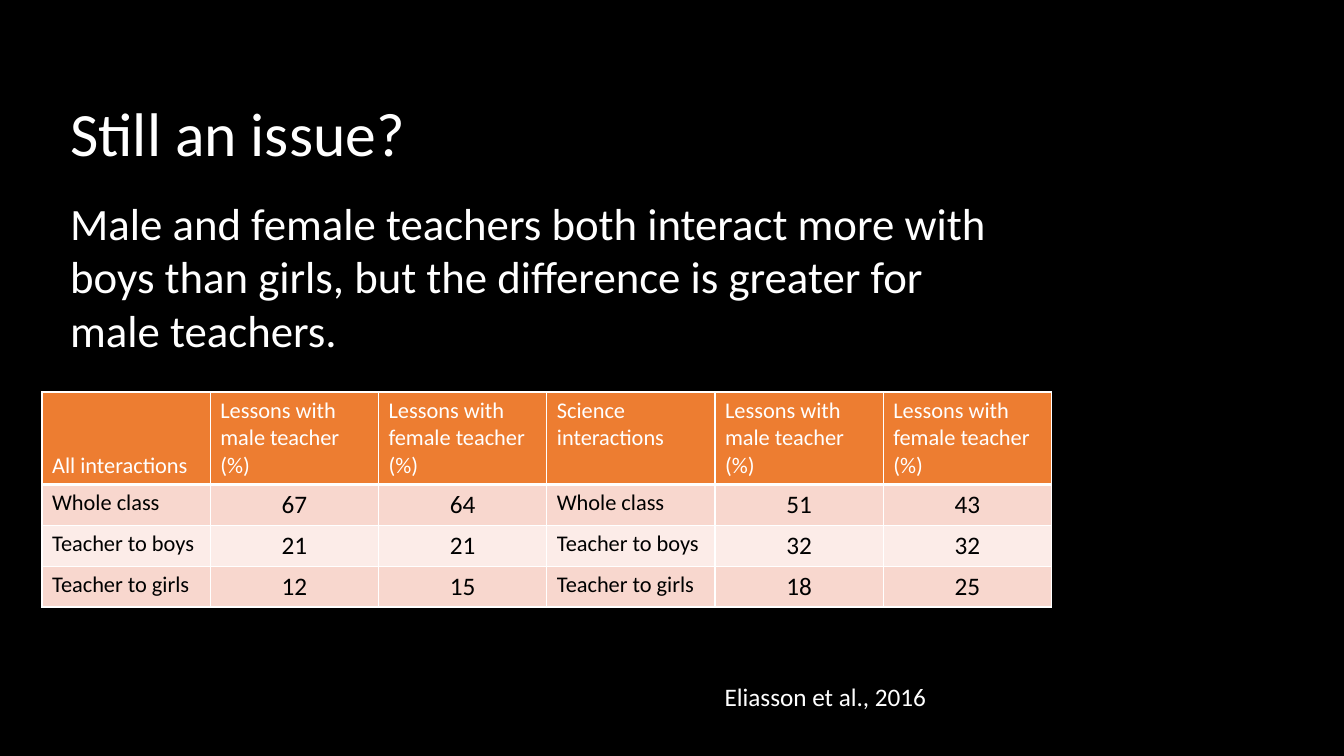
from lxml.etree import SubElement
from pptx import Presentation
from pptx.dml.color import RGBColor
from pptx.enum.text import MSO_ANCHOR as Anchor, MSO_AUTO_SIZE as AutoSize, PP_ALIGN as Align
from pptx.oxml.ns import qn
from pptx.util import Cm, Pt

BLACK, WHITE, ORANGE = "000000", "FFFFFF", "ED7D31"
BANDS = ["F8D7CE", "FCECE8"]
LEFT, TEXT_WIDTH = 1.52, 23.98

TEACHERS = ["Lessons with male teacher (%)", "Lessons with female teacher (%)"]
ROWS = [
    ["All interactions", *TEACHERS, "Science interactions", *TEACHERS],
    ["Whole class", "67", "64", "Whole class", "51", "43"],
    ["Teacher to boys", "21", "21", "Teacher to boys", "32", "32"],
    ["Teacher to girls", "12", "15", "Teacher to girls", "18", "25"],
]
COLUMN_WIDTH, HEADER_HEIGHT, ROW_HEIGHT = 4.24, 2.32, 1.03


def color(value):
    return RGBColor.from_string(value)


def apply_format(target, values):
    for name, value in values.items():
        setattr(target, name, value)


def write_text(frame, text, size, ink=WHITE, **paragraph_format):
    frame.text = text
    paragraph = frame.paragraphs[0]
    apply_format(paragraph, {"alignment": Align.LEFT, **paragraph_format})
    apply_format(paragraph.font, {"name": "Calibri", "size": Pt(size)})
    paragraph.font.color.rgb = color(ink)


def add_title(slide, text):
    title = slide.shapes.title
    apply_format(title, {"left": Cm(LEFT), "top": Cm(1.02),
                         "width": Cm(TEXT_WIDTH), "height": Cm(3.68)})
    apply_format(title.text_frame, {"vertical_anchor": Anchor.MIDDLE,
                                    "auto_size": AutoSize.NONE})
    write_text(title.text_frame, text, 44, line_spacing=1.5)


def add_text(slide, text, box, size, auto_size=AutoSize.NONE):
    frame = slide.shapes.add_textbox(*map(Cm, box)).text_frame
    apply_format(frame, {"word_wrap": True, "auto_size": auto_size})
    write_text(frame, text, size)


def set_borders(cell, bottom_width):
    properties = cell._tc.get_or_add_tcPr()
    for side, width in {"L": 1, "R": 1, "T": 1, "B": bottom_width}.items():
        line = SubElement(properties, qn(f"a:ln{side}"), w=str(Pt(width)))
        fill = SubElement(line, qn("a:solidFill"))
        SubElement(fill, qn("a:srgbClr"), val=WHITE)


def fill_cell(cell, text, row):
    header = row == 0
    number = text.isdigit()
    write_text(cell.text_frame, text, 18 if number else 16,
               WHITE if header else BLACK,
               alignment=Align.CENTER if number else Align.LEFT)
    set_borders(cell, 3 if header else 1)
    cell.fill.solid()
    cell.fill.fore_color.rgb = color(ORANGE if header else BANDS[(row - 1) % 2])


def add_interaction_table(slide, left, top):
    columns = len(ROWS[0])
    heights = [HEADER_HEIGHT] + [ROW_HEIGHT] * (len(ROWS) - 1)
    table = slide.shapes.add_table(len(ROWS), columns, Cm(left), Cm(top),
                                   Cm(COLUMN_WIDTH * columns), Cm(sum(heights))).table
    for column in table.columns:
        column.width = Cm(COLUMN_WIDTH)
    for row, (texts, height) in enumerate(zip(ROWS, heights)):
        table.rows[row].height = Cm(height)
        for column, text in enumerate(texts):
            fill_cell(table.cell(row, column), text, row)
    table.cell(0, 0).vertical_anchor = Anchor.BOTTOM


def main():
    presentation = Presentation()
    apply_format(presentation, {"slide_width": Cm(33.87), "slide_height": Cm(19.05)})
    slide = presentation.slides.add_slide(presentation.slide_layouts[5])

    # Black background
    slide.background.fill.solid()
    slide.background.fill.fore_color.rgb = color(BLACK)

    # Title and main statement
    add_title(slide, "Still an issue?")
    add_text(slide, "Male and female teachers both interact more with boys than girls, "
                    "but the difference is greater for male teachers.",
             (LEFT, 4.8, TEXT_WIDTH, 8.38), 32)

    # Interaction shares and their source
    add_interaction_table(slide, 1.06, 9.88)
    add_text(slide, "Eliasson et al., 2016", (18.01, 17.04, 6.4, 1.02), 18,
             AutoSize.SHAPE_TO_FIT_TEXT)

    presentation.save("out.pptx")


if __name__ == "__main__":
    main()
